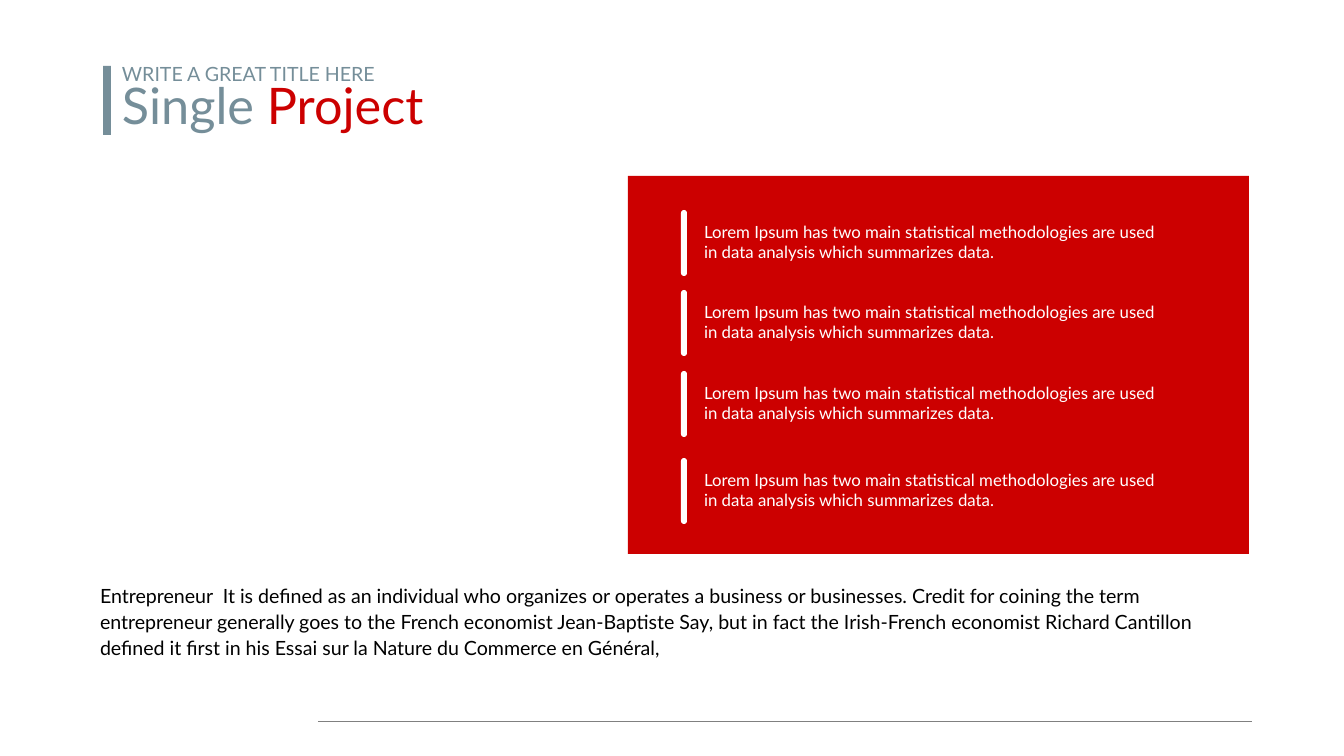
import pptx
import pptx.dml.color
import pptx.enum.shapes
import pptx.enum.text
import pptx.util
from lxml import etree
from pptx.oxml.ns import qn

COLORS = {"red": "CC0000", "slate": "758E99", "white": "FFFFFF", "black": "000000", "gray": "808080"}
FONT = "Lato"
EMU_PER_PX = 914400 / 50.4

KICKER = [("WRITE A GREAT TITLE HERE", "slate")]
TITLE = [("Single ", "slate"), ("Project", "red")]
POINT = "Lorem Ipsum has two main statistical methodologies are used in data analysis which summarizes data."
# Each point with the top of its marker
POINTS = [(POINT, 210), (POINT, 290), (POINT, 371), (POINT, 458)]
DEFINITION = (
    "Entrepreneur  It is defined as an individual who organizes or operates a business or businesses. "
    "Credit for coining the term entrepreneur generally goes to the French economist Jean-Baptiste Say, "
    "but in fact the Irish-French economist Richard Cantillon defined it first in his "
    "Essai sur la Nature du Commerce en Général,"
)

MARKER_LEFT, MARKER_WIDTH, MARKER_HEIGHT = 681, 6, 66
POINT_OFFSET = (11, 6)
POINT_SIZE = (482, 53)


def px(*lengths):
    return [pptx.util.Emu(round(length * EMU_PER_PX)) for length in lengths]


def color(name):
    return pptx.dml.color.RGBColor.from_string(COLORS[name])


def place(placeholder, box):
    for side, length in zip(("left", "top", "width", "height"), px(*box)):
        setattr(placeholder, side, length)
    return placeholder


def write(holder, runs, size, spacing=1.0, inset=(5, 3)):
    """Fill a text holder with one left-aligned paragraph of (text, colour) runs."""
    frame = holder.text_frame
    across, down = px(*inset)
    frame_format = {
        "word_wrap": True,
        "auto_size": pptx.enum.text.MSO_AUTO_SIZE.NONE,
        "vertical_anchor": pptx.enum.text.MSO_ANCHOR.TOP,
        "margin_left": across, "margin_right": across,
        "margin_top": down, "margin_bottom": down,
    }
    for key, value in frame_format.items():
        setattr(frame, key, value)

    paragraph = frame.paragraphs[0]
    paragraph_format = {
        "alignment": pptx.enum.text.PP_ALIGN.LEFT,
        "line_spacing": spacing,
        "space_before": pptx.util.Pt(0),
    }
    for key, value in paragraph_format.items():
        setattr(paragraph, key, value)
    for text, color_name in runs:
        run = paragraph.add_run()
        run.text = text
        run.font.name = FONT
        run.font.size = pptx.util.Pt(size)
        run.font.color.rgb = color(color_name)
    return paragraph


def remove_bullet(paragraph):
    properties = paragraph._p.get_or_add_pPr()
    properties.set("marL", "0")
    properties.set("indent", "0")
    etree.SubElement(properties, qn("a:buNone"))


def add_block(slide, kind, box, fill):
    block = slide.shapes.add_shape(kind, *px(*box))
    block.shadow.inherit = False
    block.fill.solid()
    block.fill.fore_color.rgb = color(fill)
    block.line.fill.background()
    return block


def add_footer_rule(slide):
    rule = slide.shapes.add_connector(
        pptx.enum.shapes.MSO_CONNECTOR.STRAIGHT, *px(318, 721, 1252, 721))
    rule.line.color.rgb = color("gray")
    rule.line.width = pptx.util.Pt(1)
    etree.SubElement(rule._element.spPr, qn("a:effectLst"))


def main():
    deck = pptx.Presentation()
    deck.slide_width, deck.slide_height = px(1344, 756)
    slide = deck.slides.add_slide(deck.slide_layouts[1])
    shape_kinds = pptx.enum.shapes.MSO_SHAPE

    add_footer_rule(slide)
    add_block(slide, shape_kinds.RECTANGLE, (103, 66, 8, 69), "slate")
    write(place(slide.shapes.title, (117, 83, 773, 56)), TITLE, 72, spacing=0.8)
    write(slide.shapes.add_textbox(*px(117, 59, 483, 29)), KICKER, 28)

    definition = place(slide.placeholders[1], (95, 579, 1154, 87))
    remove_bullet(write(definition, [(DEFINITION, "black")], 28, spacing=1.1))

    add_block(slide, shape_kinds.RECTANGLE, (628, 176, 621, 378), "red")
    for text, top in POINTS:
        marker = add_block(slide, shape_kinds.ROUND_2_SAME_RECTANGLE,
                           (MARKER_LEFT, top, MARKER_WIDTH, MARKER_HEIGHT), "white")
        marker.adjustments[0] = marker.adjustments[1] = 0.5
        point_box = (MARKER_LEFT + POINT_OFFSET[0], top + POINT_OFFSET[1], *POINT_SIZE)
        write(slide.shapes.add_textbox(*px(*point_box)), [(text, "white")], 24, inset=(12, 6))

    deck.save("out.pptx")


if __name__ == "__main__":
    main()
